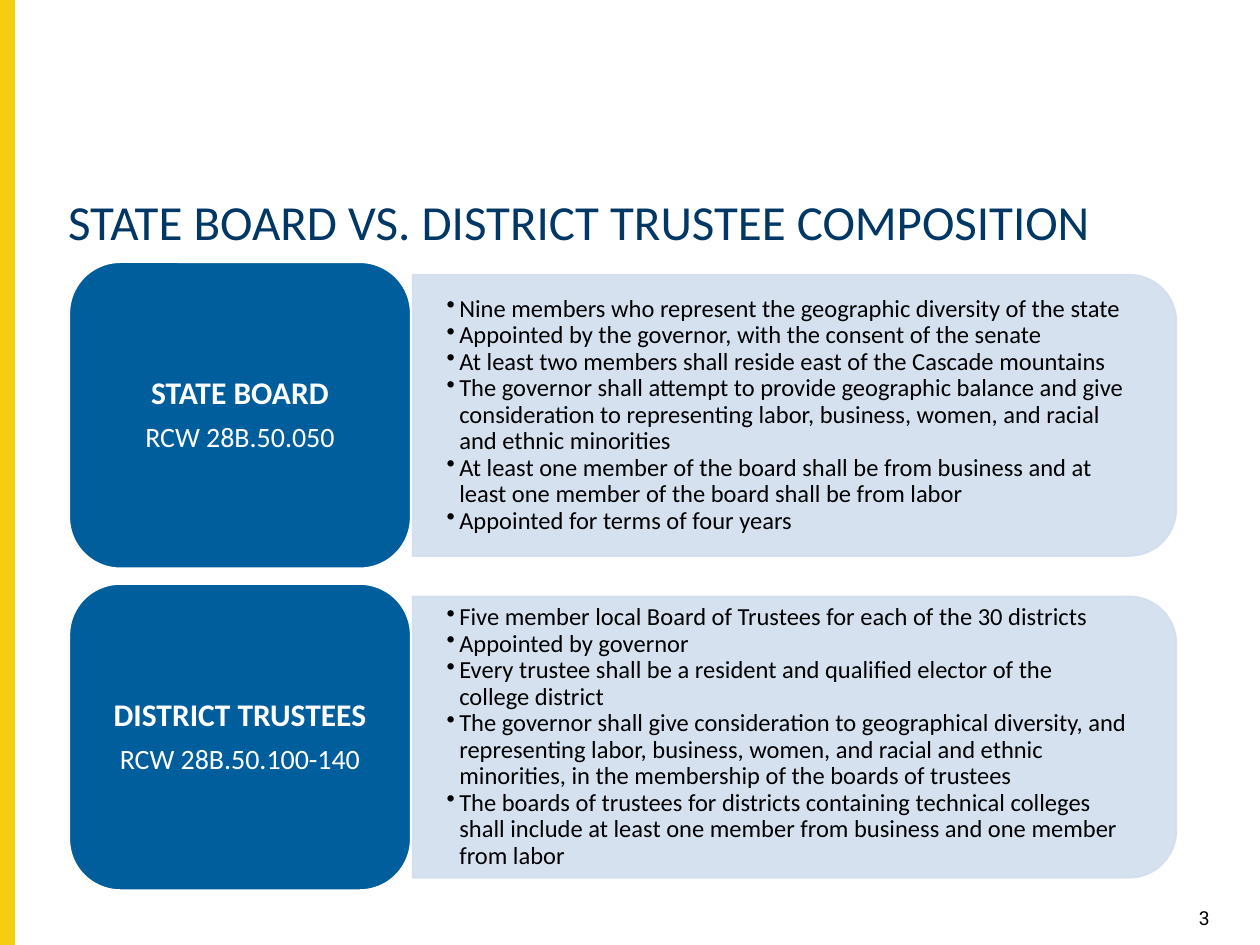
import pptx
import pptx.dml.color
import pptx.enum.shapes
import pptx.enum.text
import pptx.oxml.ns
import pptx.util
from lxml import etree

RGBColor = pptx.dml.color.RGBColor
SHAPE = pptx.enum.shapes.MSO_SHAPE
ALIGN = pptx.enum.text.PP_ALIGN
ANCHOR = pptx.enum.text.MSO_ANCHOR
Inches, Pt = pptx.util.Inches, pptx.util.Pt

YELLOW = RGBColor(0xF4, 0xCE, 0x12)
NAVY = RGBColor(0x00, 0x37, 0x64)
BLUE = RGBColor(0x00, 0x5E, 0x9C)
PALE_BLUE = RGBColor(0xD2, 0xDE, 0xEF)
WHITE = RGBColor(0xFF, 0xFF, 0xFF)
BLACK = RGBColor(0x00, 0x00, 0x00)

presentation = pptx.Presentation()
presentation.slide_width = Inches(10)
presentation.slide_height = Inches(7.5)
# The grid has 100 columns and 100 rows.
COLUMN = presentation.slide_width / 100
ROW = presentation.slide_height / 100

LABEL_LEFT, LABEL_WIDTH = 5.5 * COLUMN, 27.1 * COLUMN
PANEL_LEFT, PANEL_WIDTH = 32.75 * COLUMN, 60.6 * COLUMN
BULLETS_WIDTH = 59.5 * COLUMN
BAND_TOP, BAND_HEIGHT, BAND_PITCH = 27.75 * ROW, 32.4 * ROW, 34.05 * ROW
PANEL_HEIGHT, BULLETS_HEIGHT = 29.75 * ROW, 26.8 * ROW

BANDS = [
    ("STATE BOARD", "RCW 28B.50.050", [
        "Nine members who represent the geographic diversity of the state",
        "Appointed by the governor, with the consent of the senate",
        "At least two members shall reside east of the Cascade mountains",
        "The governor shall attempt to provide geographic balance and give consideration "
        "to representing labor, business, women, and racial and ethnic minorities",
        "At least one member of the board shall be from business and at least one member "
        "of the board shall be from labor",
        "Appointed for terms of four years",
    ]),
    ("DISTRICT TRUSTEES", "RCW 28B.50.100-140", [
        "Five member local Board of Trustees for each of the 30 districts",
        "Appointed by governor",
        "Every trustee shall be a resident and qualified elector of the college district",
        "The governor shall give consideration to geographical diversity, and representing "
        "labor, business, women, and racial and ethnic minorities, in the membership of "
        "the boards of trustees",
        "The boards of trustees for districts containing technical colleges shall include "
        "at least one member from business and one member from labor",
    ]),
]


def write(shape, lines, *, sizes, color, font="Calibri", bold_first=False, align=ALIGN.LEFT,
          anchor=ANCHOR.TOP, insets=(0.1, 0.05), spacing=0.9, after=0, bullet=False):
    """Fill a shape with one paragraph per line; sizes repeats its last value."""
    frame = shape.text_frame
    frame.word_wrap = True
    frame.auto_size = pptx.enum.text.MSO_AUTO_SIZE.NONE
    frame.vertical_anchor = anchor
    frame.margin_left = frame.margin_right = Inches(insets[0])
    frame.margin_top = frame.margin_bottom = Inches(insets[1])
    for index, line in enumerate(lines):
        paragraph = frame.paragraphs[0] if index == 0 else frame.add_paragraph()
        paragraph.text = line
        paragraph.alignment = align
        paragraph.line_spacing = spacing
        paragraph.space_after = Pt(after)
        if bullet:
            paragraph.level = 1
            properties = paragraph._p.get_or_add_pPr()
            properties.set("marL", str(Inches(0.1)))
            properties.set("indent", str(-Inches(0.1)))
            etree.SubElement(properties, pptx.oxml.ns.qn("a:buChar")).set("char", "•")
        paragraph.font.name = font
        paragraph.font.size = Pt(sizes[min(index, len(sizes) - 1)])
        paragraph.font.bold = bold_first and index == 0
        paragraph.font.color.rgb = color


def add_block(kind, left, top, width, height, fill, line):
    block = slide.shapes.add_shape(kind, int(left), int(top), int(width), int(height))
    block.shadow.inherit = False
    block.fill.solid()
    block.fill.fore_color.rgb = fill
    block.line.color.rgb = line
    block.line.width = Pt(1)
    return block


slide = presentation.slides.add_slide(presentation.slide_layouts[5])
add_block(SHAPE.RECTANGLE, 0, 0, 1.1 * COLUMN, 100 * ROW, YELLOW, YELLOW)

title = slide.shapes.title
title.left, title.top = int(4.4 * COLUMN), int(20.25 * ROW)
title.width, title.height = int(91.2 * COLUMN), int(9.3 * ROW)
write(title, ["STATE BOARD VS. DISTRICT TRUSTEE COMPOSITION"], sizes=[28], color=NAVY)

page_number = slide.shapes.add_textbox(
    int(92 * COLUMN), int(95.2 * ROW), int(5 * COLUMN), int(2.8 * ROW))
write(page_number, ["3"], sizes=[11], color=BLACK, font="Roboto", align=ALIGN.RIGHT, spacing=1.0)

for index, (name, statute, rules) in enumerate(BANDS):
    top = BAND_TOP + index * BAND_PITCH
    middle = top + BAND_HEIGHT / 2

    # The panel is turned a quarter, so its width and height change places.
    panel = add_block(SHAPE.ROUND_2_SAME_RECTANGLE,
                      PANEL_LEFT + (PANEL_WIDTH - PANEL_HEIGHT) / 2, middle - PANEL_WIDTH / 2,
                      PANEL_HEIGHT, PANEL_WIDTH, PALE_BLUE, PALE_BLUE)
    panel.rotation = 90
    for color in panel._element.spPr.iter(pptx.oxml.ns.qn("a:srgbClr")):
        etree.SubElement(color, pptx.oxml.ns.qn("a:alpha")).set("val", "90000")

    bullets = slide.shapes.add_textbox(int(PANEL_LEFT), int(middle - BULLETS_HEIGHT / 2),
                                       int(BULLETS_WIDTH), int(BULLETS_HEIGHT))
    write(bullets, rules, sizes=[14], color=BLACK, anchor=ANCHOR.MIDDLE,
          insets=(0.27, 0.14), bullet=True)

    label = add_block(SHAPE.ROUNDED_RECTANGLE, LABEL_LEFT, top, LABEL_WIDTH, BAND_HEIGHT,
                      BLUE, WHITE)
    write(label, [name, statute], sizes=[18, 16], color=WHITE, bold_first=True,
          align=ALIGN.CENTER, anchor=ANCHOR.MIDDLE, insets=(0.07, 0.04), after=7)

presentation.save("out.pptx")
